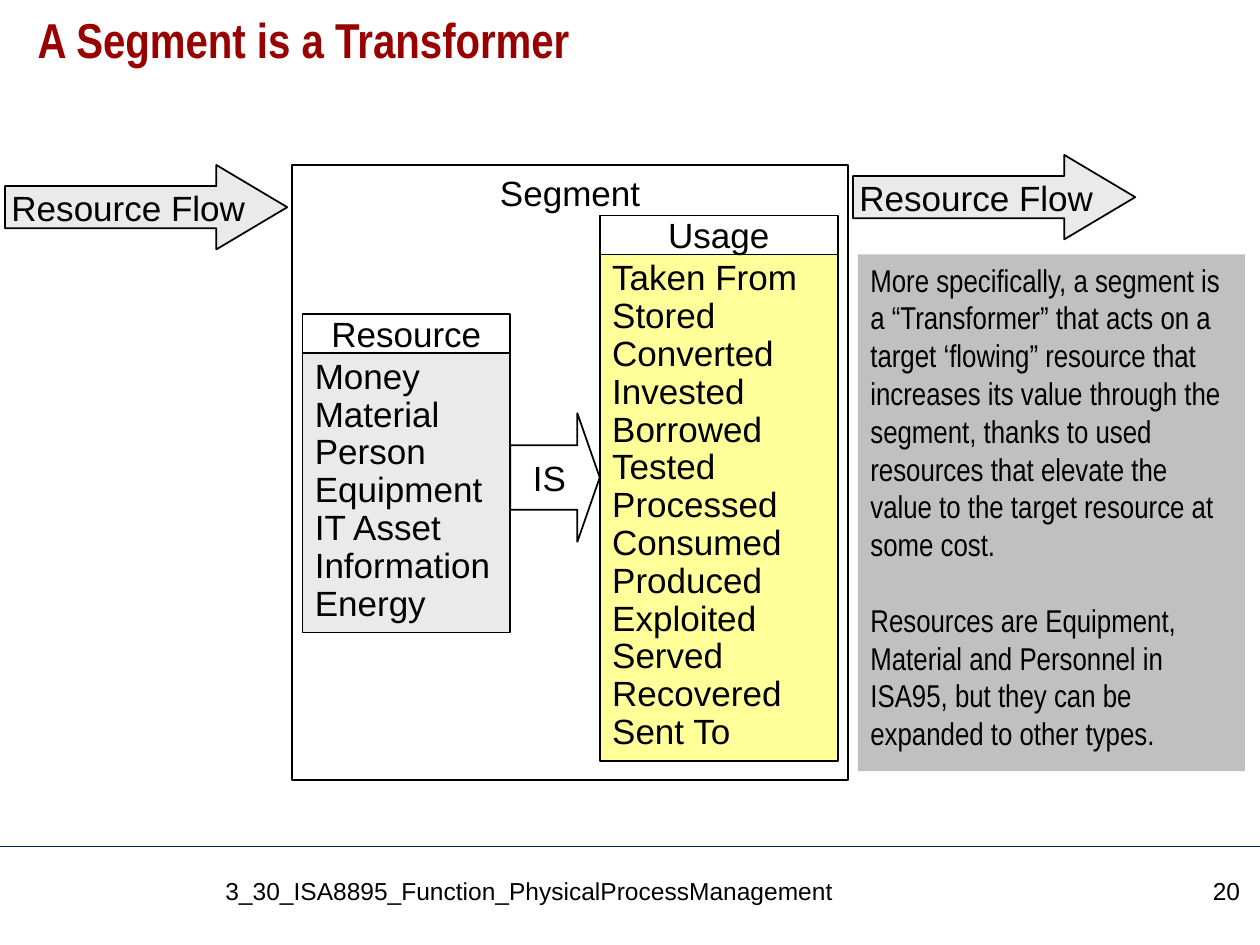
from dataclasses import dataclass

from lxml.etree import SubElement
from pptx import Presentation
from pptx.dml.color import RGBColor
from pptx.enum.shapes import MSO_CONNECTOR, MSO_SHAPE
from pptx.enum.text import MSO_ANCHOR, PP_ALIGN
from pptx.oxml.ns import qn
from pptx.util import Inches, Pt


@dataclass(frozen=True)
class Theme:
    body_font: str = "Arial"
    narrow_font: str = "Arial Narrow"
    title_color: str = "990000"
    ink: str = "000000"
    rule: str = "002060"
    pale: str = "EAEAEA"
    yellow: str = "FFFF99"
    gray: str = "C0C0C0"
    title_size: float = 28
    label_size: float = 20
    note_size: float = 18
    footer_size: float = 14
    list_spacing: float = 0.9
    note_gap: float = 21.6


class SegmentSlide:
    def __init__(self, page, theme):
        self.page = page
        self.theme = theme

    def set_text(self, shape, lines, size, font=None, color=None, bold=False,
                 align=PP_ALIGN.LEFT, anchor=MSO_ANCHOR.TOP, wrap=True,
                 spacing=None, gap=0):
        frame = shape.text_frame
        frame.text = "\n".join(lines)
        frame.word_wrap = wrap
        frame.vertical_anchor = anchor
        for index, paragraph in enumerate(frame.paragraphs):
            paragraph.alignment = align
            if spacing:
                paragraph.line_spacing = spacing
            if gap and index:
                paragraph.space_before = Pt(gap)
            for span in paragraph.runs:
                span.font.name = font or self.theme.body_font
                span.font.size = Pt(size)
                span.font.bold = bold
                span.font.color.rgb = RGBColor.from_string(color or self.theme.ink)

    def text(self, bounds, line, size, **style):
        box = self.page.shapes.add_textbox(*map(Inches, bounds))
        self.set_text(box, [line], size, **style)

    def shape(self, kind, bounds, fill=None, outlined=True):
        shape = self.page.shapes.add_shape(kind, *map(Inches, bounds))
        shape.shadow.inherit = False
        if fill:
            shape.fill.solid()
            shape.fill.fore_color.rgb = RGBColor.from_string(fill)
        else:
            shape.fill.background()
        if outlined:
            shape.line.color.rgb = RGBColor.from_string(self.theme.ink)
            shape.line.width = Pt(1)
        else:
            shape.line.fill.background()
        return shape

    def label(self, bounds, line, anchor=MSO_ANCHOR.MIDDLE):
        box = self.shape(MSO_SHAPE.RECTANGLE, bounds)
        self.set_text(box, [line], self.theme.label_size, align=PP_ALIGN.CENTER,
                      anchor=anchor, wrap=False)

    def arrow(self, bounds, line, head, fill=None):
        arrow = self.shape(MSO_SHAPE.RIGHT_ARROW, bounds, fill)
        arrow.adjustments[0] = 0.5
        arrow.adjustments[1] = head
        self.set_text(arrow, [line], self.theme.label_size, align=PP_ALIGN.CENTER,
                      anchor=MSO_ANCHOR.MIDDLE, wrap=False)

    def item_list(self, bounds, items, fill):
        box = self.shape(MSO_SHAPE.RECTANGLE, bounds, fill)
        self.set_text(box, items, self.theme.label_size,
                      spacing=self.theme.list_spacing)

    def note(self, bounds, paragraphs):
        box = self.shape(MSO_SHAPE.RECTANGLE, bounds, self.theme.gray, outlined=False)
        self.set_text(box, paragraphs, self.theme.note_size,
                      font=self.theme.narrow_font, gap=self.theme.note_gap)

    def rule(self, top, width):
        line = self.page.shapes.add_connector(
            MSO_CONNECTOR.STRAIGHT, 0, Inches(top), Inches(width), Inches(top))
        line.line.color.rgb = RGBColor.from_string(self.theme.rule)
        line.line.width = Pt(0.75)
        SubElement(line._element.spPr, qn("a:effectLst"))


def main():
    deck = Presentation()
    deck.slide_width = Inches(10)
    deck.slide_height = Inches(7.5)
    theme = Theme()
    slide = SegmentSlide(deck.slides.add_slide(deck.slide_layouts[6]), theme)

    slide.rule(6.72, 10)
    slide.text((0.2, 0.08, 9.61, 0.83), "A Segment is a Transformer",
               theme.title_size, font=theme.narrow_font, color=theme.title_color,
               bold=True, spacing=0.9)
    slide.text((1.69, 6.9, 7.21, 0.45),
               "3_30_ISA8895_Function_PhysicalProcessManagement", theme.footer_size)
    slide.text((9.02, 6.9, 0.92, 0.45), "20", theme.footer_size,
               align=PP_ALIGN.RIGHT)

    slide.label((2.32, 1.31, 4.41, 4.88), "Segment", MSO_ANCHOR.TOP)
    for left, top in ((0.04, 1.31), (6.77, 1.23)):
        slide.arrow((left, top, 2.24, 0.67), "Resource Flow", 0.84, theme.pale)

    resources = ["Money", "Material", "Person", "Equipment", "IT Asset",
                 "Information", "Energy"]
    usages = ["Taken From", "Stored", "Converted", "Invested", "Borrowed",
              "Tested", "Processed", "Consumed", "Produced", "Exploited",
              "Served", "Recovered", "Sent To"]
    header_height = 0.31
    columns = (
        ("Resource", resources, 2.4, 2.8, 1.65, 2.22, theme.pale),
        ("Usage", usages, 4.76, 2.02, 1.89, 4.02, theme.yellow),
    )
    for heading, items, left, top, width, height, fill in columns:
        slide.item_list((left, top, width, height), items, fill)
        slide.label((left, top - header_height, width, header_height), heading)
    slide.arrow((4.05, 3.28, 0.71, 1.02), "IS", 0.25)

    slide.note((6.81, 2.02, 3.07, 4.1), [
        "More specifically, a segment is a “Transformer” that acts on a target "
        "‘flowing” resource that increases its value through the segment, thanks "
        "to used resources that elevate the value to the target resource at some cost.",
        "Resources are Equipment, Material and Personnel in ISA95, but they can be "
        "expanded to other types.",
    ])
    deck.save("out.pptx")


if __name__ == "__main__":
    main()
